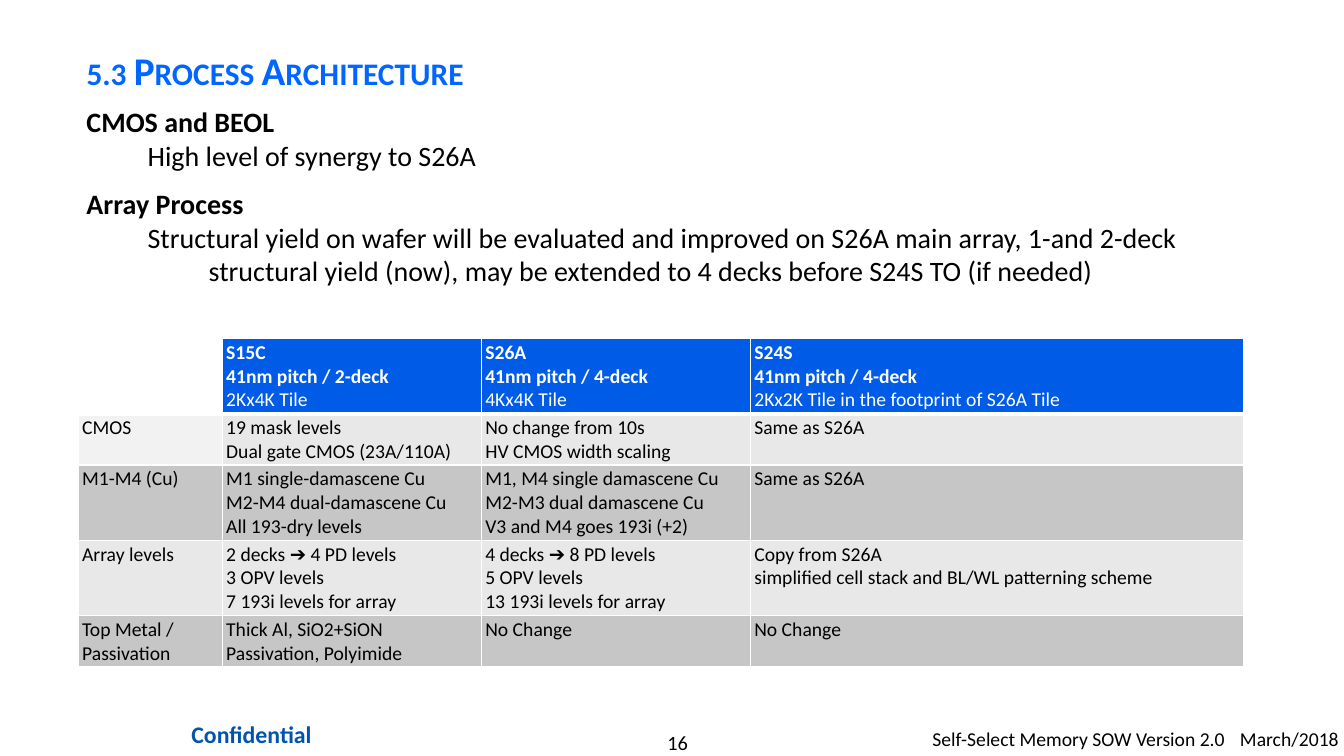
from dataclasses import dataclass

import pptx
import pptx.dml.color
import pptx.enum.text
import pptx.oxml
import pptx.oxml.ns
import pptx.util
from pptx.util import Cm

ALIGN = pptx.enum.text.PP_ALIGN
ANCHOR = pptx.enum.text.MSO_ANCHOR


@dataclass(frozen=True)
class Theme:
    font: str = "Calibri"
    title: str = "0066FF"
    text: str = "000000"
    white: str = "FFFFFF"
    confidential: str = "0054B0"
    header: str = "005CE7"
    first_label: str = "F2F2F2"
    light: str = "E8E8E8"
    dark: str = "C6C6C6"
    title_size: float = 28
    body_size: float = 20
    table_size: float = 14
    confidential_size: float = 17
    page_size: float = 14.5
    footer_size: float = 14


THEME = Theme()

BODY = [
    ("CMOS and BEOL", "High level of synergy to S26A"),
    ("Array Process",
     "Structural yield on wafer will be evaluated and improved on S26A main array, "
     "1-and 2-deck structural yield (now), may be extended to 4 decks before S24S TO "
     "(if needed)"),
]

COLUMN_WIDTHS = [3.63, 6.53, 6.78, 12.42]
ROW_HEIGHTS = [1.9, 1.28, 1.9, 1.9, 1.28]
TABLE = [
    [[],
     ["S15C", "41nm pitch / 2-deck", "2Kx4K Tile"],
     ["S26A", "41nm pitch / 4-deck", "4Kx4K Tile"],
     ["S24S", "41nm pitch / 4-deck", "2Kx2K Tile in the footprint of S26A Tile"]],
    [["CMOS"],
     ["19 mask levels", "Dual gate CMOS (23A/110A)"],
     ["No change from 10s", "HV CMOS width scaling"],
     ["Same as S26A"]],
    [["M1-M4 (Cu)"],
     ["M1 single-damascene Cu", "M2-M4 dual-damascene Cu", "All 193-dry levels"],
     ["M1, M4 single damascene Cu", "M2-M3 dual damascene Cu", "V3 and M4 goes 193i (+2)"],
     ["Same as S26A"]],
    [["Array levels"],
     ["2 decks ➔ 4 PD levels", "3 OPV levels", "7 193i levels for array"],
     ["4 decks ➔ 8 PD levels", "5 OPV levels", "13 193i levels for array"],
     ["Copy from S26A", "simplified cell stack and BL/WL patterning scheme"]],
    [["Top Metal /", "Passivation"],
     ["Thick Al, SiO2+SiON Passivation, Polyimide"],
     ["No Change"],
     ["No Change"]],
]


def rgb(color):
    return pptx.dml.color.RGBColor.from_string(color)


def write(tf, text, size, color=THEME.text, bold=False, align=ALIGN.LEFT,
          before=0, first=True):
    """Fill the first paragraph of a frame, or append another one."""
    p = tf.paragraphs[0] if first else tf.add_paragraph()
    p.alignment = align
    p.space_before = pptx.util.Pt(before)
    r = p.add_run()
    r.text = text
    r.font.name = THEME.font
    r.font.size = pptx.util.Pt(size)
    r.font.bold = bold
    r.font.color.rgb = rgb(color)
    return p


def set_margins(tf, x, y):
    tf.margin_left = tf.margin_right = Cm(x)
    tf.margin_top = tf.margin_bottom = Cm(y)


def add_text_box(slide, left, top, width, height, margins, wrap=True):
    tf = slide.shapes.add_textbox(Cm(left), Cm(top), Cm(width), Cm(height)).text_frame
    tf.word_wrap = wrap
    set_margins(tf, *margins)
    return tf


def add_title(slide, text):
    sp = slide.shapes.title
    sp.left, sp.top, sp.width, sp.height = Cm(1.93), Cm(0.53), Cm(28.09), Cm(2.34)
    tf = sp.text_frame
    tf.auto_size = pptx.enum.text.MSO_AUTO_SIZE.NONE
    tf.vertical_anchor = ANCHOR.MIDDLE
    set_margins(tf, 0.25, 0.13)
    p = write(tf, text, THEME.title_size, THEME.title, bold=True)
    p.line_spacing = 1.1
    p.runs[0].font._element.set("cap", "small")


def add_body(slide):
    tf = add_text_box(slide, 1.93, 2.51, 30.3, 5.87, (0.25, 0.13))
    for i, (heading, detail) in enumerate(BODY):
        write(tf, heading, THEME.body_size, bold=True,
              before=10.5 if i else 0, first=i == 0)
        p = write(tf, detail, THEME.body_size, first=False)
        p_pr = p._p.get_or_add_pPr()
        p_pr.set("marL", str(Cm(3.08)))
        p_pr.set("indent", str(Cm(-1.54)))


def add_borders(cell, top, bottom):
    """Draw white edges, with the top and bottom widths in points."""
    tc_pr = cell._tc.get_or_add_tcPr()
    for tag, width in (("lnL", 1), ("lnR", 1), ("lnT", top), ("lnB", bottom)):
        tc_pr.append(pptx.oxml.parse_xml(
            f'<a:{tag} {pptx.oxml.ns.nsdecls("a")} w="{pptx.util.Pt(width)}">'
            f'<a:solidFill><a:srgbClr val="{THEME.white}"/></a:solidFill></a:{tag}>'))


def cell_fill(row, col):
    if row == 0:
        return THEME.header if col else THEME.white
    if (row, col) == (1, 0):
        return THEME.first_label
    return THEME.light if row % 2 else THEME.dark


def add_process_table(slide):
    table = slide.shapes.add_table(
        len(ROW_HEIGHTS), len(COLUMN_WIDTHS), Cm(1.97), Cm(8.53),
        Cm(sum(COLUMN_WIDTHS)), Cm(sum(ROW_HEIGHTS))).table
    for column, width in zip(table.columns, COLUMN_WIDTHS):
        column.width = Cm(width)
    for row, height in zip(table.rows, ROW_HEIGHTS):
        row.height = Cm(height)
    for row, contents in enumerate(TABLE):
        for col, lines in enumerate(contents):
            cell = table.cell(row, col)
            set_margins(cell, 0.1, 0.05)
            add_borders(cell, 3 if row == 1 else 1, 3 if row == 0 else 1)
            cell.fill.solid()
            cell.fill.fore_color.rgb = rgb(cell_fill(row, col))
            for i, line in enumerate(lines):
                write(cell.text_frame, line, THEME.table_size,
                      THEME.text if row else THEME.white,
                      bold=row == 0 and i < 2, first=i == 0)


def add_footer(slide):
    tf = add_text_box(slide, 14.12, 18.39, 5.92, 0.61, (0, 0))
    write(tf, "16", THEME.page_size, align=ALIGN.CENTER)

    tf = add_text_box(slide, 3.94, 17.98, 4.8, 1.04, (0.3, 0.15))
    write(tf, "Confidential", THEME.confidential_size, THEME.confidential,
          bold=True, align=ALIGN.CENTER)

    tf = add_text_box(slide, 23.5, 18.19, 10.36, 0.86, (0, 0.13), wrap=False)
    p = write(tf, "Self-Select Memory SOW Version 2.0\tMarch/2018", THEME.footer_size)
    p._p.get_or_add_pPr().append(pptx.oxml.parse_xml(
        f'<a:tabLst {pptx.oxml.ns.nsdecls("a")}>'
        f'<a:tab pos="{Cm(7.75)}" algn="l"/></a:tabLst>'))


def main():
    prs = pptx.Presentation()
    prs.slide_width, prs.slide_height = Cm(33.87), Cm(19.05)
    slide = prs.slides.add_slide(prs.slide_layouts.get_by_name("Title Only"))
    add_footer(slide)
    add_title(slide, "5.3 Process Architecture")
    add_body(slide)
    add_process_table(slide)
    prs.save("out.pptx")


if __name__ == "__main__":
    main()
